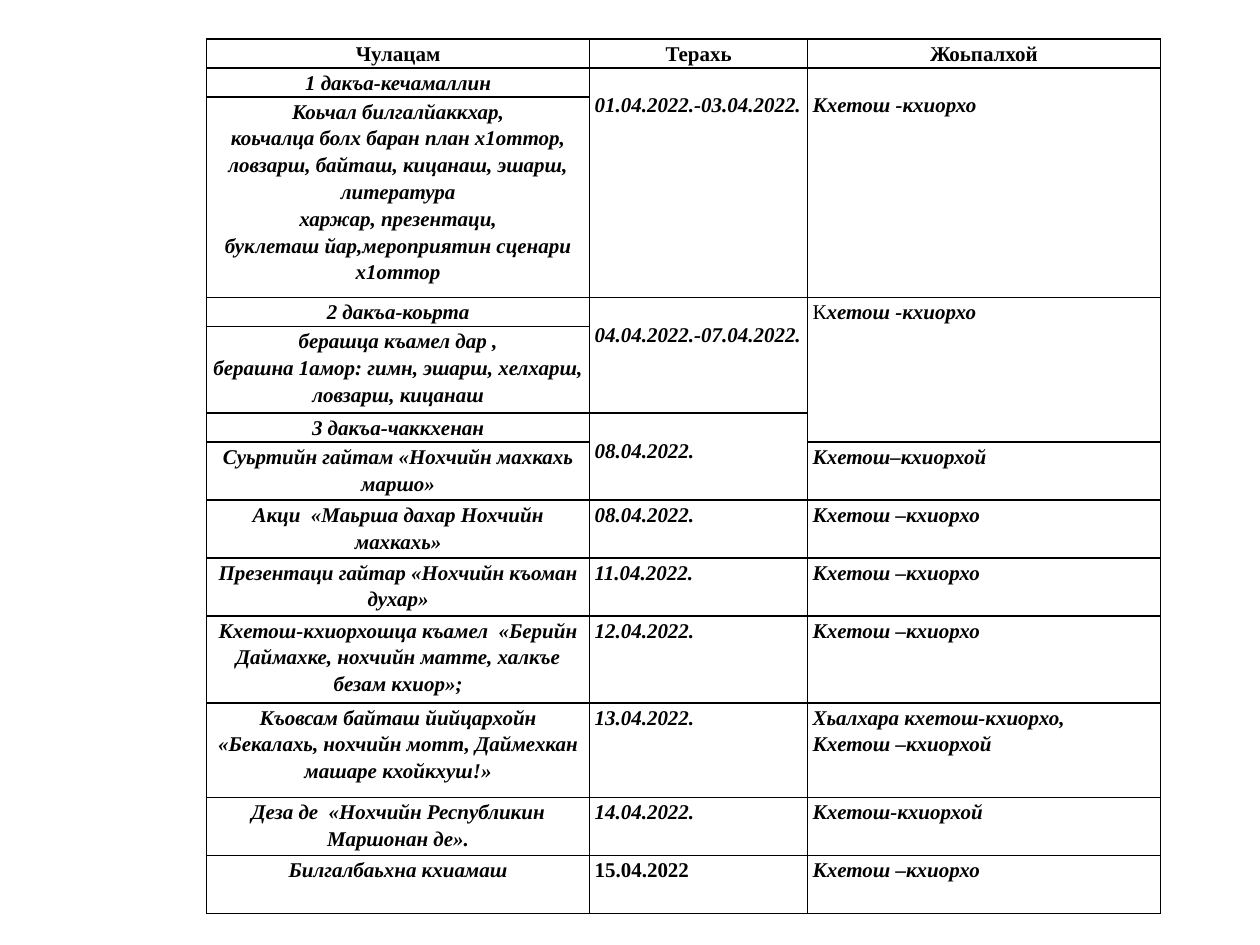
from lxml.etree import SubElement
from pptx import Presentation
from pptx.dml.color import RGBColor
from pptx.enum.text import PP_ALIGN
from pptx.oxml.ns import qn
from pptx.util import Inches, Pt

FONT = "Times New Roman"
BLACK = "000000"
LEFT, TOP = 1.64, 0.31
COL_WIDTHS = [3.04, 1.73, 2.8]
ROW_HEIGHTS = [0.23, 0.23, 1.59, 0.23, 0.69, 0.23, 0.46, 0.46, 0.46, 0.69, 0.75, 0.46, 0.46]
LOWERED = 0.18  # top margin of text that starts one line down

# Each row: content, date, responsible; None is covered by the cell above
ROWS = [
    ("Чулацам", "Терахь", "Жоьпалхой"),
    ("1 дакъа-кечамаллин", "01.04.2022.-03.04.2022.", "Кхетош -кхиорхо"),
    ("Коьчал билгалйаккхар,\n"
     "коьчалца болх баран план х1оттор, ловзарш, байташ, кицанаш, эшарш, литература\n"
     "харжар, презентаци,\n"
     "буклеташ йар,мероприятин сценари х1оттор", None, None),
    ("2 дакъа-коьрта", "04.04.2022.-07.04.2022.", "Кхетош -кхиорхо"),
    ("берашца къамел дар ,\n"
     "берашна 1амор: гимн, эшарш, хелхарш, ловзарш, кицанаш", None, None),
    ("3 дакъа-чаккхенан", "08.04.2022.", None),
    ("Суьртийн гайтам «Нохчийн махкахь маршо»", None, "Кхетош–кхиорхой"),
    ("Акци  «Маьрша дахар Нохчийн махкахь»", "08.04.2022.", "Кхетош –кхиорхо"),
    ("Презентаци гайтар «Нохчийн къоман духар»", "11.04.2022.", "Кхетош –кхиорхо"),
    ("Кхетош-кхиорхошца къамел  «Берийн Даймахке, нохчийн матте, халкъе безам кхиор»;",
     "12.04.2022.", "Кхетош –кхиорхо"),
    ("Къовсам байташ йийцархойн «Бекалахь, нохчийн мотт, Даймехкан машаре кхойкхуш!»",
     "13.04.2022.", "Хьалхара кхетош-кхиорхо,\nКхетош –кхиорхой"),
    ("Деза де  «Нохчийн Республикин Маршонан де».", "14.04.2022.", "Кхетош-кхиорхой"),
    ("Билгалбаьхна кхиамаш", "15.04.2022", "Кхетош –кхиорхо"),
]
SPANS = {(1, 1): 2, (1, 2): 2, (3, 1): 2, (3, 2): 3, (5, 1): 2}
LOWERED_CELLS = {(1, 1), (1, 2), (3, 1), (5, 1)}
LAST_DATE = (12, 1)
PLAIN_INITIAL = (3, 2)


def color(hex_value):
    return RGBColor.from_string(hex_value)


def set_borders(cell):
    tcPr = cell._tc.get_or_add_tcPr()
    for side in ("a:lnL", "a:lnR", "a:lnT", "a:lnB"):
        ln = SubElement(tcPr, qn(side), w=str(Pt(1)))
        fill = SubElement(ln, qn("a:solidFill"))
        SubElement(fill, qn("a:srgbClr"), val=BLACK)


def format_cell(cell):
    set_borders(cell)
    cell.fill.background()
    cell.margin_left = cell.margin_right = Inches(0.04)
    cell.margin_top = cell.margin_bottom = 0


def write_cell(cell, text, centered, italic):
    tf = cell.text_frame
    tf.text = text
    for p in tf.paragraphs:
        p.alignment = PP_ALIGN.CENTER if centered else PP_ALIGN.LEFT
        p.line_spacing = 1.15
        p.font.name = FONT
        p.font.size = Pt(12)
        p.font.bold = True
        p.font.italic = italic
        p.font.color.rgb = color(BLACK)


def unstyle_initial(p):
    """Make the first letter of a paragraph regular."""
    first = p.runs[0]
    rest = p.add_run()
    first.text, rest.text = first.text[0], first.text[1:]
    for r, styled in ((first, False), (rest, True)):
        r.font.bold = r.font.italic = styled


def add_plan_table(s):
    shape = s.shapes.add_table(len(ROWS), len(COL_WIDTHS), Inches(LEFT), Inches(TOP),
                               Inches(sum(COL_WIDTHS)), Inches(sum(ROW_HEIGHTS)))
    table = shape.table
    table.first_row = table.horz_banding = False
    for column, width in zip(table.columns, COL_WIDTHS):
        column.width = Inches(width)
    for row, height in zip(table.rows, ROW_HEIGHTS):
        row.height = Inches(height)

    # Cell contents
    for i, row in enumerate(ROWS):
        for j, text in enumerate(row):
            cell = table.cell(i, j)
            format_cell(cell)
            if text is not None:
                write_cell(cell, text, centered=i == 0 or j == 0,
                           italic=i > 0 and (i, j) != LAST_DATE)
            if (i, j) in LOWERED_CELLS:
                cell.margin_top = Inches(LOWERED)
    unstyle_initial(table.cell(*PLAIN_INITIAL).text_frame.paragraphs[0])

    # Vertical merges
    for (i, j), count in SPANS.items():
        table.cell(i, j).merge(table.cell(i + count - 1, j))


def main():
    prs = Presentation()
    prs.slide_width, prs.slide_height = Inches(10), Inches(7.5)
    s = prs.slides.add_slide(prs.slide_layouts[6])
    add_plan_table(s)
    prs.save("out.pptx")


if __name__ == "__main__":
    main()
